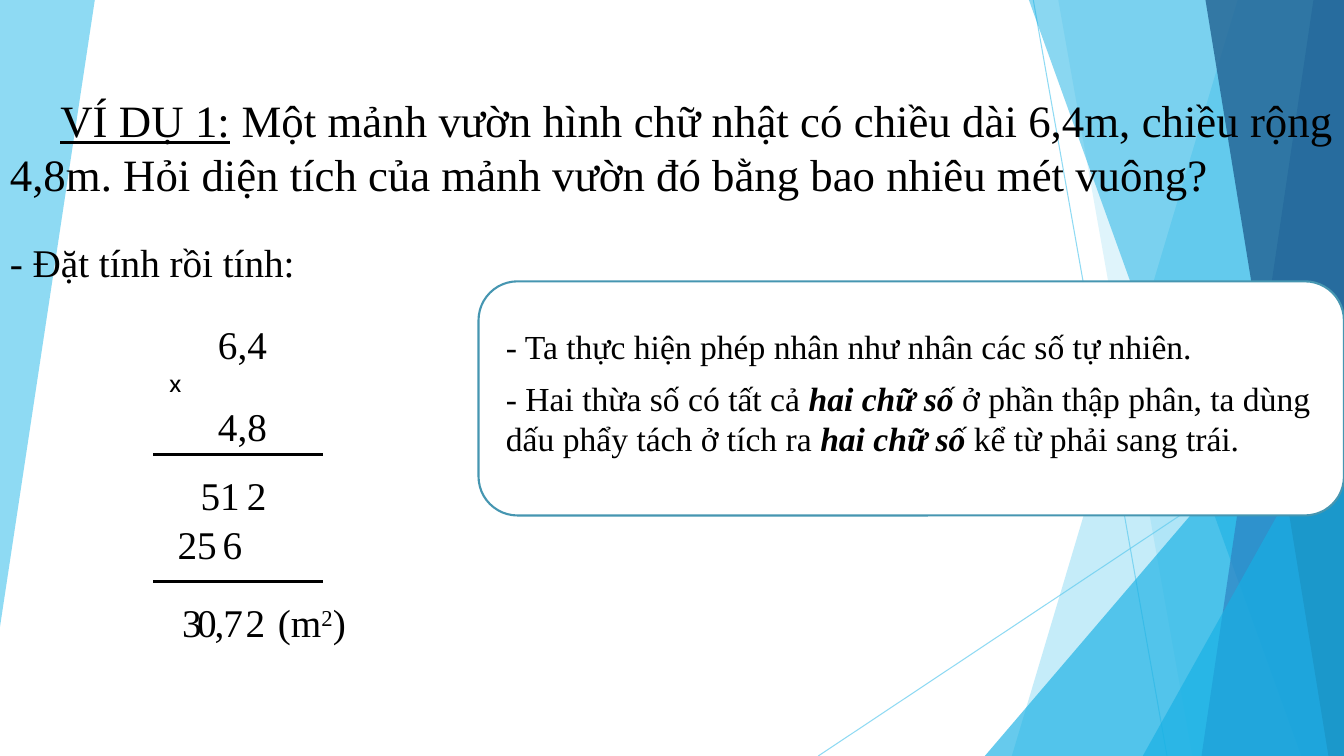
from lxml import etree
from pptx import Presentation
from pptx import util as u
from pptx.dml.color import RGBColor
from pptx.enum import shapes, text
from pptx.oxml.ns import qn

W, H = 33.87, 19.05
SERIF = "Times New Roman"
BLACK, SKY, CYAN = "000000", "5FCBEF", "17B0E4"

# Background facets, back to front: colour, opacity %, corner points in cm
LEFT_FACET = (SKY, 70, [(0, 0), (2.39, 0), (0, 15.8)])
RAYS = [((26.04, 0), (29.41, H)), ((W, 10.24), (20.62, H))]


def edge_facet(top, bottom):
    return [(top, 0), (W, 0), (W, H), (bottom, H)]


RIGHT_FACETS = [
    (SKY, 36, edge_facet(31.19, 25.5)),
    (SKY, 20, edge_facet(26.67, 30.05)),
    (CYAN, 66, (24.82, 8.46)),  # a single point is the upper left of a triangle
    (CYAN, 50, edge_facet(25.93, 32.79)),
    ("2E83C3", 70, edge_facet(33.1, 30.28)),
    ("226292", 80, edge_facet(30.38, 33.48)),
    (CYAN, 66, (28.8, 9.98)),
]

# Sentences: left, top, width, height, size, runs of (text, style)
SENTENCES = [
    (0, 2.21, W, 3, 32, [
        ("VÍ DỤ 1:", "u"),
        (" Một mảnh vườn hình chữ nhật có chiều dài 6,4m, chiều rộng 4,8m. "
         "Hỏi diện tích của mảnh vườn đó bằng bao nhiêu mét vuông?", "")]),
    (0, 5.89, 7.77, 1.45, 28, [("- Đặt tính rồi tính:", "")]),
    (12.5, 8.1, 21.36, 1.27, 24,
     [("- Ta thực hiện phép nhân như nhân các số tự nhiên.", "")]),
    (12.5, 9.4, 21.36, 2.31, 24, [
        ("- Hai thừa số có tất cả ", ""), ("hai chữ số ", "bi"),
        ("ở phần thập phân, ta dùng dấu phẩy tách ở tích ra ", ""),
        ("hai chữ số ", "bi"), ("kể từ phải sang trái.", "")]),
]

# Written multiplication: top of each row, then (text, left, width)
ROWS = [
    (7.95, [("6,4", 5.13, 1.96)]),
    (10.01, [("4,8", 5.13, 1.96)]),
    (11.76, [("2", 5.97, 0.66), ("51", 4.8, 1.5)]),
    (12.98, [("6", 5.36, 0.66), ("25", 4.22, 1.5)]),
    (14.94, [("2", 5.94, 0.66), ("7", 5.38, 0.66), (",", 5.16, 0.51)]),
    (14.96, [("0", 4.72, 0.66), ("3", 4.34, 0.51)]),
]
UNIT = [("(m", ""), ("2", "^"), (")", "")]
RULES = [11.46, 14.66]

prs = Presentation()
prs.slide_width, prs.slide_height = u.Cm(W), u.Cm(H)
s = prs.slides.add_slide(prs.slide_layouts[6])


def rgb(value):
    return RGBColor.from_string(value)


def set_alpha(fill, percent):
    color = fill._xPr.find(qn("a:solidFill"))[0]
    etree.SubElement(color, qn("a:alpha")).set("val", str(percent * 1000))


def add_facet(color, alpha, points):
    if isinstance(points, tuple):
        x, y = points
        sp = s.shapes.add_shape(shapes.MSO_SHAPE.ISOSCELES_TRIANGLE,
                                u.Cm(x), u.Cm(y), u.Cm(W - x), u.Cm(H - y))
        sp.adjustments[0] = 1
    else:
        corners = [(u.Cm(x), u.Cm(y)) for x, y in points]
        builder = s.shapes.build_freeform(*corners[0])
        builder.add_line_segments(corners[1:], close=True)
        sp = builder.convert_to_shape()
    sp.shadow.inherit = False
    sp.fill.solid()
    sp.fill.fore_color.rgb = rgb(color)
    set_alpha(sp.fill, alpha)
    sp.line.fill.background()


def add_line(start, end, color, width, alpha=100):
    line = s.shapes.add_connector(shapes.MSO_CONNECTOR.STRAIGHT,
                                  *(u.Cm(v) for v in start + end))
    line.line.color.rgb = rgb(color)
    line.line.width = u.Pt(width)
    if alpha < 100:
        set_alpha(line.line.fill, alpha)
    etree.SubElement(line._element.spPr, qn("a:effectLst"))


def add_text(x, y, w, h, size, runs, align=text.PP_ALIGN.LEFT, font=SERIF):
    sp = s.shapes.add_textbox(u.Cm(x), u.Cm(y), u.Cm(w), u.Cm(h))
    tf = sp.text_frame
    tf.word_wrap = True
    tf.auto_size = text.MSO_AUTO_SIZE.SHAPE_TO_FIT_TEXT
    p = tf.paragraphs[0]
    p.alignment = align
    for words, style in runs:
        r = p.add_run()
        r.text = words
        r.font.name, r.font.size = font, u.Pt(size)
        r.font.color.rgb = rgb(BLACK)
        r.font.bold, r.font.italic = "b" in style, "i" in style
        r.font.underline = "u" in style
        if "^" in style:
            r._r.get_or_add_rPr().set("baseline", "30000")
    return p


# Background
add_facet(*LEFT_FACET)
for start, end in RAYS:
    add_line(start, end, SKY, 0.75, 70)
for facet in RIGHT_FACETS:
    add_facet(*facet)

# Rule panel
panel = s.shapes.add_shape(shapes.MSO_SHAPE.ROUNDED_RECTANGLE,
                           u.Cm(12.06), u.Cm(7.09), u.Cm(21.81), u.Cm(5.9))
panel.shadow.inherit = False
panel.fill.solid()
panel.fill.fore_color.rgb = rgb("FFFFFF")
panel.line.color.rgb = rgb("4696B1")
panel.line.width = u.Pt(1.5)

# Problem and explanation
problem, *explanation = SENTENCES
p = add_text(*problem, align=text.PP_ALIGN.JUSTIFY)
p._p.get_or_add_pPr().set("indent", str(u.Cm(1.27)))
for sentence in explanation:
    add_text(*sentence)

# Written multiplication
center = text.PP_ALIGN.CENTER
for top, cells in ROWS:
    for digits, left, width in cells:
        add_text(left, top, width, 1.45, 28, [(digits, "")], center)
add_text(3.86, 9.14, 1.12, 1.02, 18, [("x", "")], center, "Cabin")
add_text(6.35, 14.96, 3.02, 1.45, 28, UNIT, center)
for y in RULES:
    add_line((3.86, y), (8.13, y), BLACK, 2.25)

prs.save("out.pptx")
